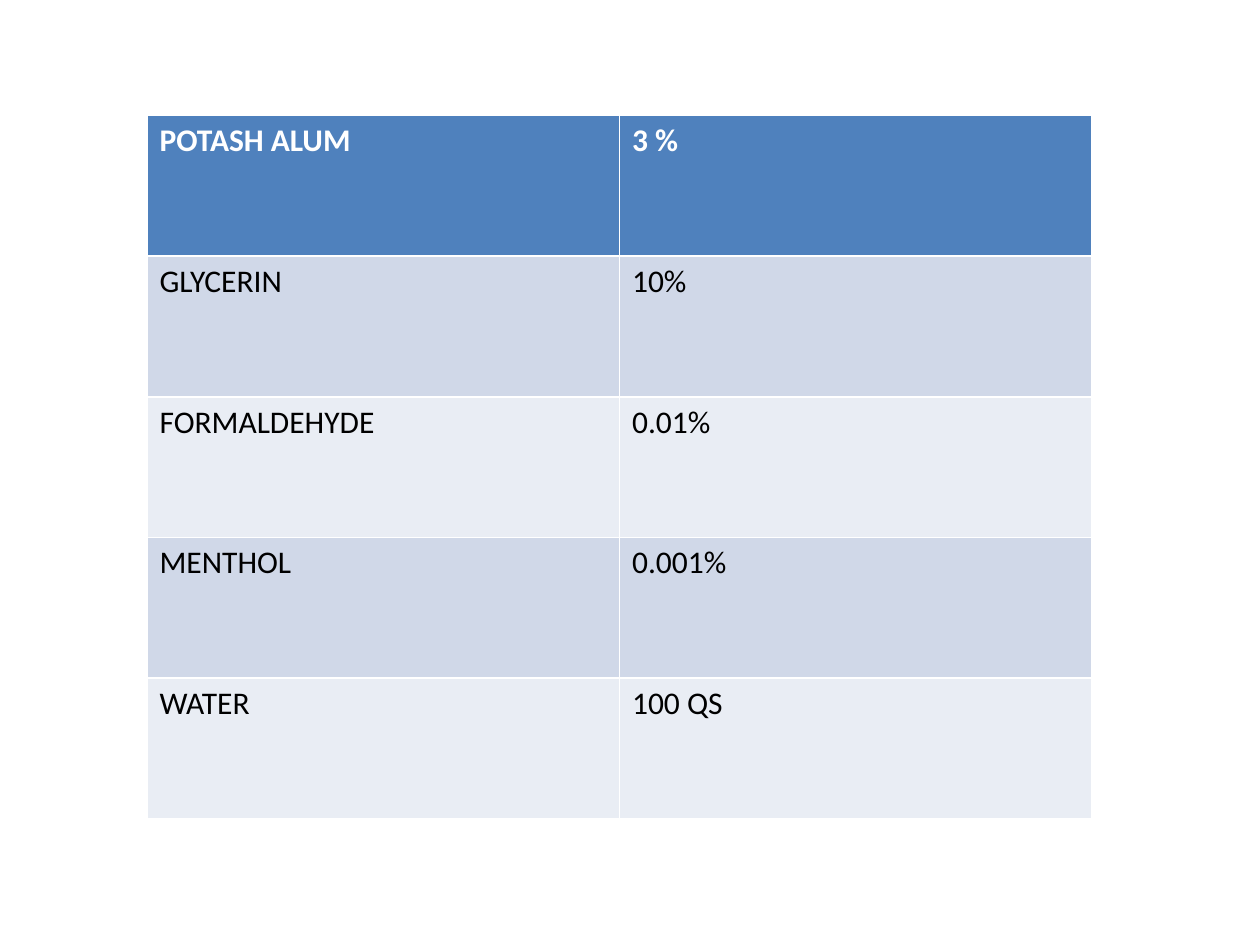
"""Build a slide with a table of ingredients and their amounts."""
from typing import NamedTuple

from pptx import Presentation
from pptx.dml.color import RGBColor
from pptx.util import Pt

BLANK_LAYOUT = 6
FONT = "Calibri"
HEADER_FILL = "4F81BD"
BAND_FILLS = ("E9EDF4", "D0D8E8")


class Ingredient(NamedTuple):
    name: str
    amount: str


INGREDIENTS = [
    Ingredient("POTASH ALUM", "3 %"),
    Ingredient("GLYCERIN", "10%"),
    Ingredient("FORMALDEHYDE", "0.01%"),
    Ingredient("MENTHOL", "0.001%"),
    Ingredient("WATER", "100 QS"),
]


def set_color(color_format, value: str) -> None:
    color_format.rgb = RGBColor.from_string(value)


def fill_cell(cell, text: str, row: int) -> None:
    is_header = row == 0
    cell.fill.solid()
    set_color(cell.fill.fore_color, HEADER_FILL if is_header else BAND_FILLS[row % 2])
    cell.text = text
    font = cell.text_frame.paragraphs[0].font
    font.name = FONT
    font.size = Pt(18)
    font.bold = is_header
    set_color(font.color, "FFFFFF" if is_header else "000000")


def main() -> None:
    prs = Presentation()
    prs.slide_width, prs.slide_height = Pt(720), Pt(540)
    slide = prs.slides.add_slide(prs.slide_layouts[BLANK_LAYOUT])
    formula = slide.shapes.add_table(
        len(INGREDIENTS), len(Ingredient._fields), Pt(84), Pt(66), Pt(540), Pt(402)
    ).table
    for row, ingredient in enumerate(INGREDIENTS):
        for column, text in enumerate(ingredient):
            fill_cell(formula.cell(row, column), text, row)
    prs.save("out.pptx")


if __name__ == "__main__":
    main()
